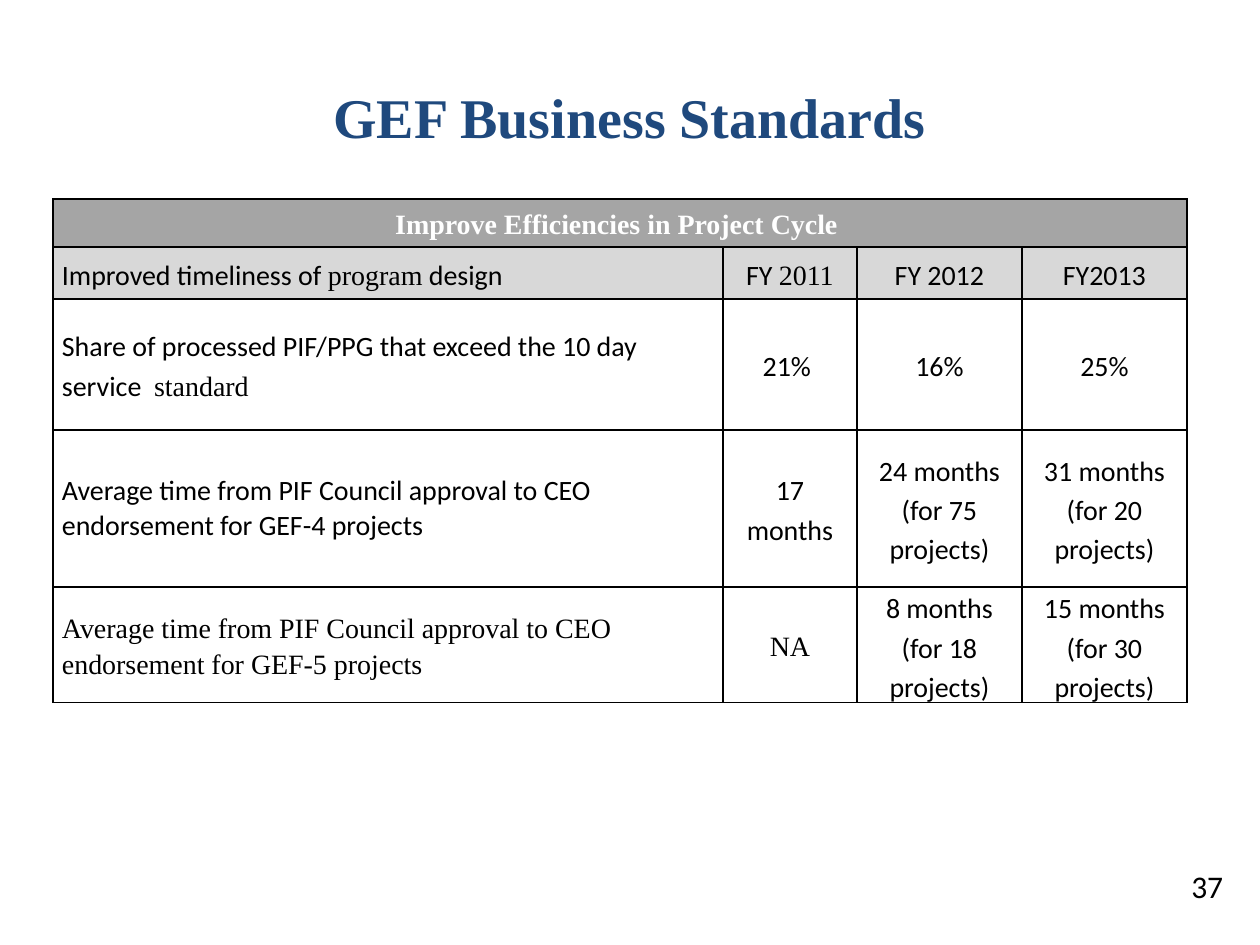
from dataclasses import dataclass

from lxml import etree
from pptx import Presentation
from pptx.dml.color import RGBColor
from pptx.enum.shapes import MSO_SHAPE
from pptx.enum.text import MSO_ANCHOR, PP_ALIGN
from pptx.oxml.ns import qn
from pptx.util import Pt

ELLIPSE = MSO_SHAPE.OVAL
MIDDLE = MSO_ANCHOR.MIDDLE
LEFT, CENTER = PP_ALIGN.LEFT, PP_ALIGN.CENTER
EMU_PER_PX = 914400 / 126


@dataclass(frozen=True)
class Theme:
    """Colours, fonts and type sizes of the slide."""
    title: str = "1F497D"
    text: str = "000000"
    inverse: str = "FFFFFF"
    banner: str = "A5A5A5"
    heading: str = "D8D8D8"
    border: str = "000000"
    sans: str = "Calibri"
    serif: str = "Times New Roman"
    title_size: int = 32
    number_size: int = 18
    table_size: int = 16
    line_spacing: float = 1.15
    border_width: int = 1


THEME = Theme()
SANS, SERIF = THEME.sans, THEME.serif
BANNER = "Improve Efficiencies in Project Cycle "
COLUMN_WIDTHS = [670, 134, 165, 165]
ROW_HEIGHTS = [48, 52, 131, 157, 103]
STANDARDS = [
    [[("Improved timeliness of ", SANS), ("program", SERIF), (" design", SANS)],
     [("FY ", SANS), ("2011", SERIF)], [("FY 2012", SANS)], [("FY2013", SANS)]],
    [[("Share of processed PIF/PPG that exceed the 10 day service  ", SANS), ("standard", SERIF)],
     [("21% ", SANS)], [("16%", SANS)], [("25%", SANS)]],
    [[("Average time from PIF Council approval to CEO endorsement for GEF-4 projects", SANS)],
     [("17 months", SANS)], [("24 months (for 75 projects)", SANS)],
     [("31 months (for 20 projects)", SANS)]],
    [[("Average time from PIF Council approval to CEO endorsement for GEF-5 projects", SERIF)],
     [("NA", SERIF)], [("8 months (for 18 projects)", SANS)],
     [("15 months (for 30 projects)", SANS)]],
]
SINGLE_SPACED = (3, 0)


def px(length):
    """Turn px into EMU."""
    return round(length * EMU_PER_PX)


def style_font(font, name, size, color, bold=False):
    """Set the typeface, size, colour and weight of a font."""
    font.name, font.size, font.bold = name, Pt(size), bold
    font.color.rgb = RGBColor.from_string(color)


def add_title(slide, left, top, width, height):
    """Place the centred slide title in its box."""
    shape = slide.shapes.add_textbox(px(left), px(top), px(width), px(height))
    frame = shape.text_frame
    frame.word_wrap = True
    frame.vertical_anchor = MIDDLE
    frame.text = "GEF Business Standards"
    paragraph = frame.paragraphs[0]
    paragraph.alignment = CENTER
    style_font(paragraph.runs[0].font, SERIF, THEME.title_size, THEME.title, True)


def add_page_number(slide, left, top, width, height):
    """Place the page number in an unpainted ellipse."""
    shape = slide.shapes.add_shape(ELLIPSE, px(left), px(top), px(width), px(height))
    shape.shadow.inherit = False
    shape.fill.background()
    shape.line.fill.background()
    frame = shape.text_frame
    frame.vertical_anchor = MIDDLE
    frame.text = "37"
    paragraph = frame.paragraphs[0]
    paragraph.alignment = LEFT
    style_font(paragraph.runs[0].font, SANS, THEME.number_size, THEME.text)


def add_borders(cell):
    """Draw a solid line on all four sides of a cell."""
    properties = cell._tc.get_or_add_tcPr()
    for index, side in enumerate(("a:lnL", "a:lnR", "a:lnT", "a:lnB")):
        line = etree.Element(qn(side), w=str(Pt(THEME.border_width)))
        fill = etree.SubElement(line, qn("a:solidFill"))
        etree.SubElement(fill, qn("a:srgbClr"), val=THEME.border)
        properties.insert(index, line)


def fill_cell(cell, pieces, alignment, spacing, color, bold):
    """Write text pieces, each with its own typeface, into a cell."""
    cell.vertical_anchor = MIDDLE
    cell.margin_left = cell.margin_right = px(9)
    cell.margin_top = cell.margin_bottom = 0
    paragraph = cell.text_frame.paragraphs[0]
    paragraph.alignment, paragraph.line_spacing = alignment, spacing
    for text, typeface in pieces:
        run = paragraph.add_run()
        run.text = text
        style_font(run.font, typeface, THEME.table_size, color, bold)


def add_standards_table(slide, left, top, width, height):
    """Place the table of standards under its spanning banner."""
    shape = slide.shapes.add_table(len(ROW_HEIGHTS), len(COLUMN_WIDTHS),
                                   px(left), px(top), px(width), px(height))
    table = shape.table
    table.first_row = table.horz_banding = False
    for column, column_width in zip(table.columns, COLUMN_WIDTHS):
        column.width = px(column_width)
    for row, row_height in zip(table.rows, ROW_HEIGHTS):
        row.height = px(row_height)
    row_fills = {0: THEME.banner, 1: THEME.heading}
    for row_index, row in enumerate(table.rows):
        for cell in row.cells:
            if row_index in row_fills:
                cell.fill.solid()
                cell.fill.fore_color.rgb = RGBColor.from_string(row_fills[row_index])
            else:
                cell.fill.background()
            add_borders(cell)
    banner = table.cell(0, 0)
    banner.merge(table.cell(0, len(COLUMN_WIDTHS) - 1))
    fill_cell(banner, [(BANNER, SERIF)], CENTER, THEME.line_spacing, THEME.inverse, True)
    for row_index, entries in enumerate(STANDARDS, start=1):
        for column_index, pieces in enumerate(entries):
            alignment = CENTER if column_index else LEFT
            single = (row_index, column_index) == SINGLE_SPACED
            spacing = 1.0 if single else THEME.line_spacing
            fill_cell(table.cell(row_index, column_index), pieces, alignment, spacing,
                      THEME.text, False)


def main():
    """Build and save the slide."""
    presentation = Presentation()
    presentation.slide_width, presentation.slide_height = px(1260), px(945)
    slide = presentation.slides.add_slide(presentation.slide_layouts[6])
    add_title(slide, 63, 38, 1134, 157)
    add_page_number(slide, 1165, 851, 95, 69)
    add_standards_table(slide, 53, 199, sum(COLUMN_WIDTHS), sum(ROW_HEIGHTS))
    presentation.save("out.pptx")


if __name__ == "__main__":
    main()
